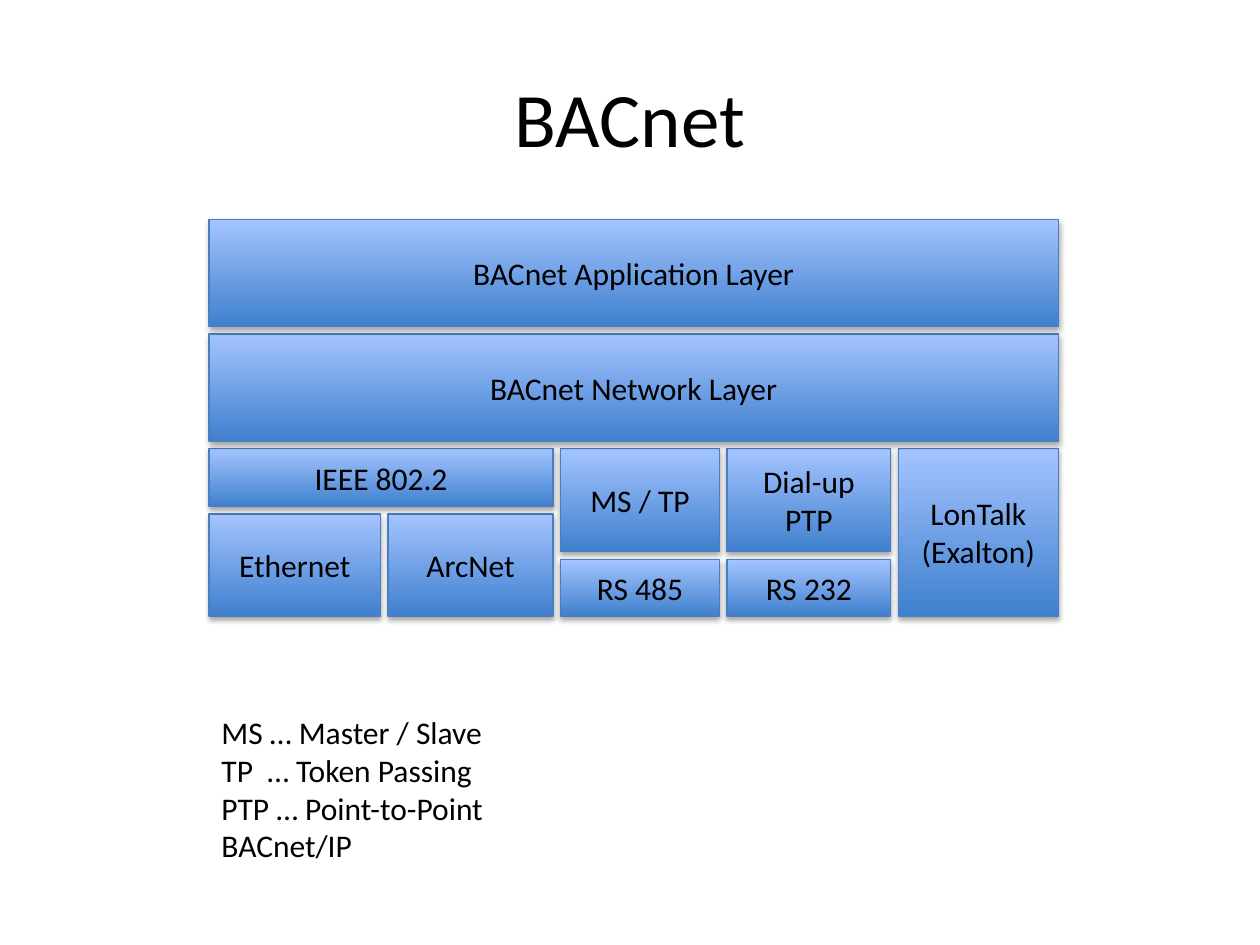
from lxml import etree
from pptx import Presentation
from pptx import util as u
from pptx.dml.color import RGBColor
from pptx.enum import shapes, text
from pptx.oxml.ns import qn

BLACK = RGBColor(0x00, 0x00, 0x00)
DEEP = RGBColor(0x3F, 0x80, 0xCE)
PALE = RGBColor(0xA4, 0xC4, 0xFF)
EDGE = RGBColor(0x4B, 0x7E, 0xBC)

# Grid lines in inches; every box stops one gap short of its end line
COLS = [1.66, 3.08, 4.45, 5.77, 7.13, 8.46]
ROWS = [1.74, 2.65, 3.56, 4.08, 4.44, 4.95]
GAP = 0.06

# Label, first and end column line, first and end row line
BOXES = [
    ("Ethernet", 0, 1, 3, 5),
    ("ArcNet", 1, 2, 3, 5),
    ("RS 485", 2, 3, 4, 5),
    ("RS 232", 3, 4, 4, 5),
    ("IEEE 802.2", 0, 2, 2, 3),
    ("MS / TP", 2, 3, 2, 4),
    ("Dial-up\nPTP", 3, 4, 2, 4),
    ("LonTalk\v(Exalton)", 4, 5, 2, 5),
    ("BACnet Network Layer", 0, 5, 1, 2),
    ("BACnet Application Layer", 0, 5, 0, 1),
]
TERMS = ("MS … Master / Slave\nTP  … Token Passing\n"
         "PTP … Point-to-Point\nBACnet/IP")


class Deck:
    font = {"name": "Calibri", "bold": False}

    def __init__(self):
        self.prs = Presentation()
        self.prs.slide_width, self.prs.slide_height = u.Inches(10), u.Inches(7.5)
        self.slide = self.prs.slides.add_slide(self.prs.slide_layouts[6])

    def label(self, shape, words, size, align, anchor):
        frame = shape.text_frame
        frame.word_wrap = True
        frame.vertical_anchor = anchor
        frame.text = words
        look = {**self.font, "size": u.Pt(size)}
        for para in frame.paragraphs:
            para.alignment = align
            for key, val in look.items():
                setattr(para.font, key, val)
            for run in para.runs:
                run.font.color.rgb = BLACK

    def note(self, words, place, size=18, align=text.PP_ALIGN.LEFT,
             anchor=text.MSO_ANCHOR.TOP):
        box = self.slide.shapes.add_textbox(*map(u.Inches, place))
        self.label(box, words, size, align, anchor)

    def box(self, words, left, right, top, end):
        place = (COLS[left], ROWS[top], COLS[right] - COLS[left] - GAP,
                 ROWS[end] - ROWS[top] - GAP)
        box = self.slide.shapes.add_shape(
            shapes.MSO_SHAPE.RECTANGLE, *map(u.Inches, place))
        box.fill.gradient()
        box.fill.gradient_angle = 90
        for stop, pos, tint in zip(box.fill.gradient_stops, (0, 1), (DEEP, PALE)):
            stop.position = pos
            stop.color.rgb = tint
        box.line.color.rgb = EDGE
        box.line.width = u.Pt(0.75)
        self.shade(box)
        self.label(box, words, 18, text.PP_ALIGN.CENTER, text.MSO_ANCHOR.MIDDLE)

    def shade(self, box):
        # Soft shadow straight below the box
        box.shadow.inherit = False
        root = box.element.spPr.find(qn("a:effectLst"))
        drop = etree.SubElement(
            root, qn("a:outerShdw"), blurRad=str(u.Pt(3.1)),
            dist=str(u.Pt(1.8)), dir="5400000", rotWithShape="0")
        tint = etree.SubElement(drop, qn("a:srgbClr"), val=str(BLACK))
        etree.SubElement(tint, qn("a:alpha"), val="35000")


def main():
    deck = Deck()
    # Title
    deck.note("BACnet", (0.5, 0.3, 9, 1.25), 44, text.PP_ALIGN.CENTER,
              text.MSO_ANCHOR.MIDDLE)
    # Protocol stack
    for item in BOXES:
        deck.box(*item)
    # Terms
    deck.note(TERMS, (COLS[0], 5.61, 5.76, 1.31))
    deck.prs.save("out.pptx")


if __name__ == "__main__":
    main()
